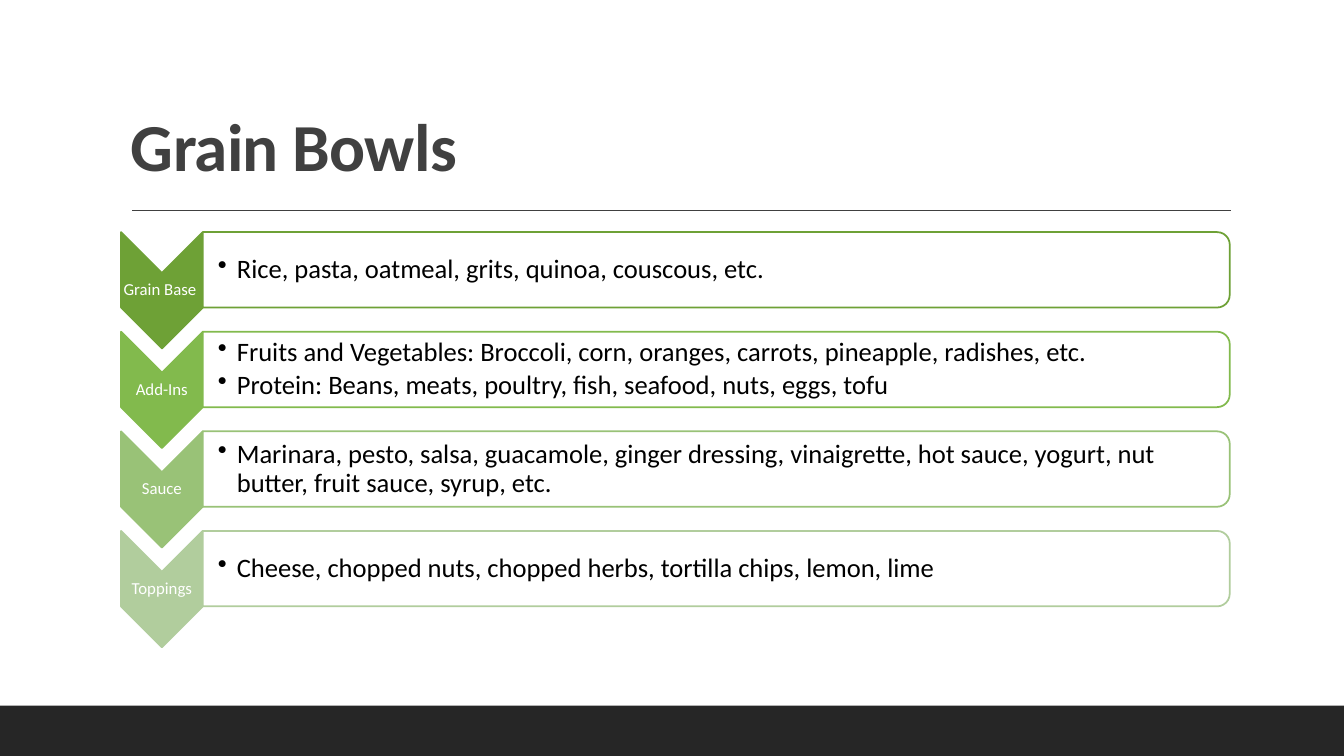
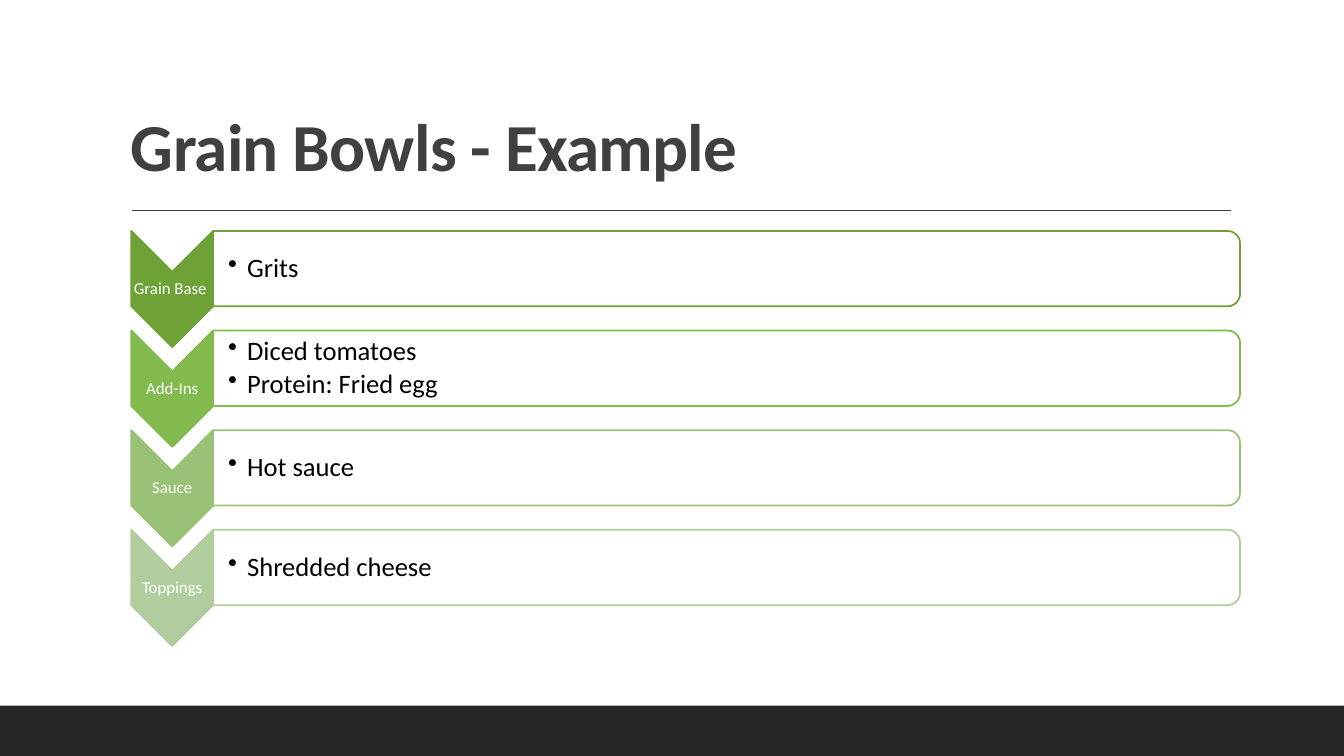
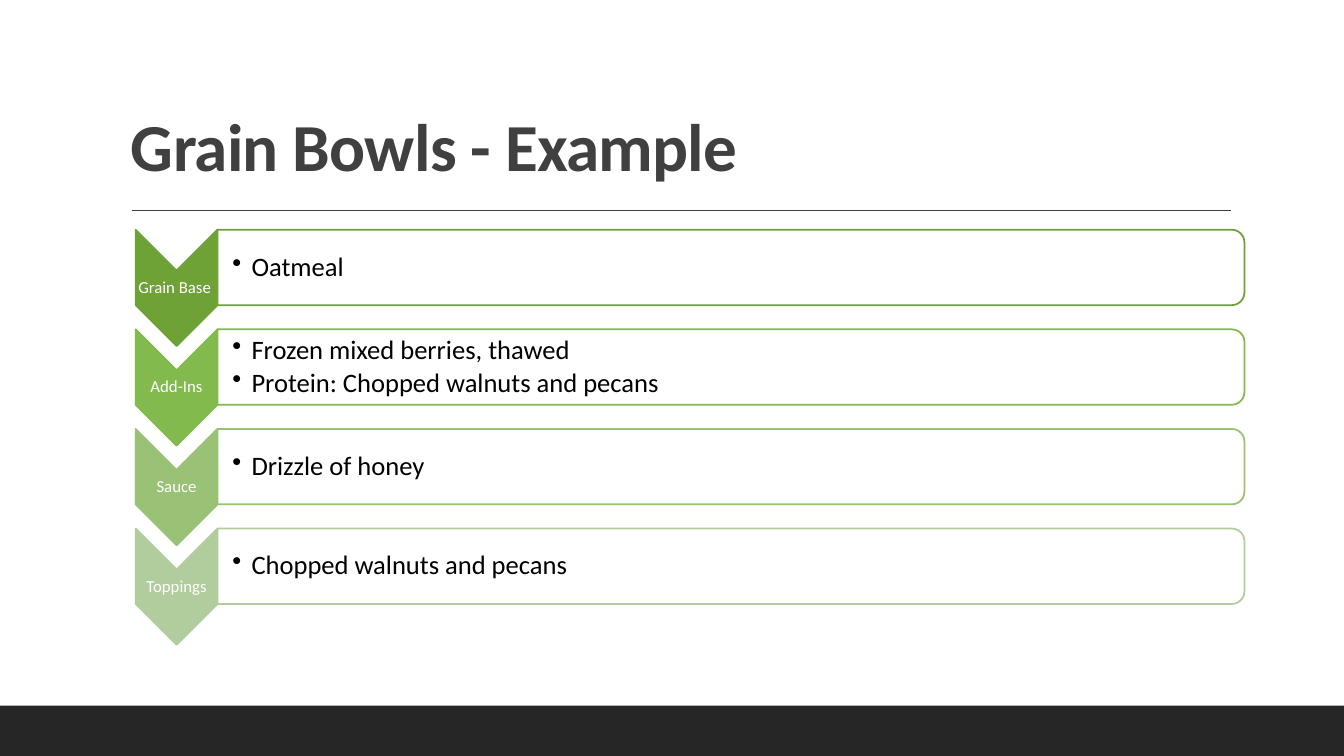
from dataclasses import dataclass

from lxml.etree import SubElement
from pptx import Presentation
from pptx.dml.color import RGBColor
from pptx.enum.shapes import MSO_CONNECTOR, MSO_SHAPE
from pptx.enum.text import MSO_ANCHOR, PP_ALIGN
from pptx.oxml.ns import qn
from pptx.util import Cm, Pt


@dataclass(frozen=True)
class Theme:
    font: str = "Calibri"
    paper: str = "FFFFFF"
    ink: str = "000000"
    head: str = "404040"
    band: str = "262626"
    greens: tuple = ("6EA136", "82BA4D", "99C277", "B1CD9D")
    title: int = 48
    body: int = 19
    label: int = 12


WIDE, HIGH = 33.87, 19.05
STEP = 2.51                  # from one row to the next
ARROW = (2.06, 2.93)         # width and height as seen
BOX = (25.88, 1.9)
TAG = (1.02, 0.89)           # label: drop below the arrow's top, height
INDENT = 0.48

STEPS = ("Grain Base ", "Add-Ins", "Sauce", "Toppings")
BOWLS = (
    ("Grain Bowls", 3.05, 5.85, (
        ["Rice, pasta, oatmeal, grits, quinoa, couscous, etc."],
        ["Fruits and Vegetables: Broccoli, corn, oranges, carrots, "
         "pineapple, radishes, etc.",
         "Protein: Beans, meats, poultry, fish, seafood, nuts, eggs, tofu"],
        ["Marinara, pesto, salsa, guacamole, ginger dressing, vinaigrette, "
         "hot sauce, yogurt, nut butter, fruit sauce, syrup, etc."],
        ["Cheese, chopped nuts, chopped herbs, tortilla chips, lemon, lime"],
    )),
    ("Grain Bowls - Example", 3.31, 5.82, (
        ["Grits"],
        ["Diced tomatoes", "Protein: Fried egg"],
        ["Hot sauce"],
        ["Shredded cheese"],
    )),
    ("Grain Bowls - Example", 3.42, 5.79, (
        ["Oatmeal"],
        ["Frozen mixed berries, thawed",
         "Protein: Chopped walnuts and pecans"],
        ["Drizzle of honey"],
        ["Chopped walnuts and pecans"],
    )),
)


def put(item, values):
    """Set each named attribute of item."""
    for name, value in values.items():
        setattr(item, name, value)


class Deck:
    def __init__(self, theme):
        self.theme = theme
        self.show = Presentation()
        put(self.show, {"slide_width": Cm(WIDE), "slide_height": Cm(HIGH)})
        self.slide = None

    def page(self, title):
        """Start a slide with its title, rule and bottom band."""
        look = self.theme
        self.slide = self.show.slides.add_slide(self.show.slide_layouts[6])
        text = self.text([title], (3.05, 0.79, 27.94, 4.04), look.title,
                         look.head, anchor=MSO_ANCHOR.BOTTOM,
                         pads=(0.25, 0.13), bold=True)
        run = text.paragraphs[0].runs[0]
        run.font._element.set("spc", "-50")
        self.rule(3.33, 31.01, 5.31)
        self.shape(MSO_SHAPE.RECTANGLE, (0, 17.78, WIDE, 1.27), look.band)

    def rule(self, left, right, top):
        line = self.slide.shapes.add_connector(
            MSO_CONNECTOR.STRAIGHT, Cm(left), Cm(top), Cm(right), Cm(top))
        line.line.color.rgb = RGBColor.from_string(self.theme.head)
        line.line.width = Pt(1)
        SubElement(line._element.spPr, qn("a:effectLst"))

    def shape(self, kind, area, fill, edge=None, turn=False):
        """Draw a shape filling area as seen, turned a quarter if asked."""
        left, top, wide, high = area
        if turn:
            left, top = left + (wide - high) / 2, top + (high - wide) / 2
            wide, high = high, wide
        shape = self.slide.shapes.add_shape(
            kind, Cm(left), Cm(top), Cm(wide), Cm(high))
        shape.shadow.inherit = False
        shape.rotation = 90 if turn else 0
        shape.fill.solid()
        shape.fill.fore_color.rgb = RGBColor.from_string(fill)
        if edge:
            shape.line.color.rgb = RGBColor.from_string(edge)
            shape.line.width = Pt(1.25)
        else:
            shape.line.fill.background()

    def text(self, lines, area, size, color, anchor=MSO_ANCHOR.MIDDLE,
             pads=(0.03, 0.03), align=PP_ALIGN.LEFT, after=0, bold=False,
             bullet=False):
        """Write one paragraph a line; pads are left and other insets."""
        frame = self.slide.shapes.add_textbox(*map(Cm, area)).text_frame
        first, rest = map(Cm, pads)
        right = first if bold else rest
        put(frame, {"word_wrap": True, "vertical_anchor": anchor,
                    "margin_left": first, "margin_right": right,
                    "margin_top": rest, "margin_bottom": rest})
        for i, line in enumerate(lines):
            para = frame.paragraphs[0] if i == 0 else frame.add_paragraph()
            if bullet:
                self.bullet(para)
            put(para, {"alignment": align, "line_spacing": 0.9,
                       "space_after": Pt(after)})
            run = para.add_run()
            run.text = line
            put(run.font, {"name": self.theme.font, "size": Pt(size),
                           "bold": bold})
            run.font.color.rgb = RGBColor.from_string(color)
        return frame

    def bullet(self, para):
        props = para._p.get_or_add_pPr()
        props.set("marL", str(Cm(INDENT)))
        props.set("indent", str(-Cm(INDENT)))
        SubElement(props, qn("a:buChar")).set("char", "•")

    def row(self, left, top, label, lines, green):
        """Draw a down arrow with its label and the box beside it."""
        look = self.theme
        wide, high = ARROW
        drop, tall = TAG
        self.shape(MSO_SHAPE.CHEVRON, (left, top, wide, high), green, green,
                   turn=True)
        self.text([label], (left, top + drop, wide, tall), look.label,
                  look.paper, align=PP_ALIGN.CENTER, after=4.2)
        area = (left + wide, top, *BOX)
        self.shape(MSO_SHAPE.ROUND_2_SAME_RECTANGLE, area, look.paper, green,
                   turn=True)
        self.text(lines, area, look.body, look.ink, pads=(0.38, 0.03),
                  after=2.85, bullet=True)


def main():
    deck = Deck(Theme())
    for title, left, top, parts in BOWLS:
        deck.page(title)
        rows = zip(STEPS, parts, deck.theme.greens)
        for i, (label, lines, green) in enumerate(rows):
            deck.row(left, top + i * STEP, label, lines, green)
    deck.show.save("out.pptx")


if __name__ == "__main__":
    main()
